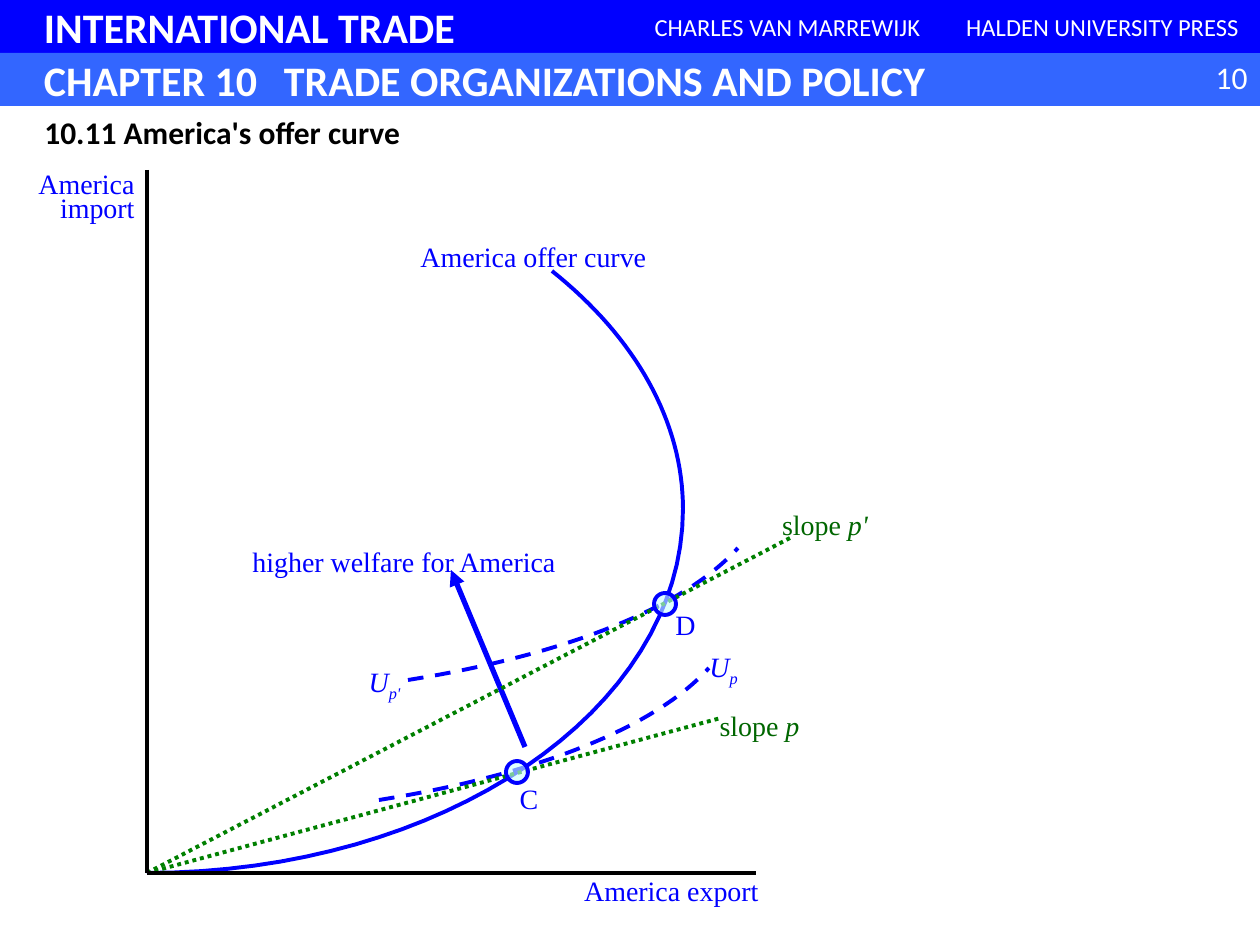
from dataclasses import dataclass

from lxml.etree import SubElement
from pptx import Presentation
from pptx.dml.color import RGBColor
from pptx.enum.dml import MSO_LINE_DASH_STYLE as DASH
from pptx.enum.shapes import MSO_CONNECTOR, MSO_SHAPE
from pptx.enum.text import MSO_ANCHOR as ANCHOR, PP_ALIGN as ALIGN
from pptx.oxml.ns import qn
from pptx.util import Emu, Pt


@dataclass(frozen=True)
class Theme:
    blue: str = "0000FF"
    band: str = "3366FF"
    green: str = "008000"
    dark_green: str = "006600"
    black: str = "000000"
    white: str = "FFFFFF"
    marker: str = "CCFFFF"
    sans: str = "Calibri"
    serif: str = "Times New Roman"
    heading: int = 24
    title: int = 18
    label: int = 16
    credit: int = 14
    line: float = 2.25
    arrow: float = 3


T = Theme()
INSET = 44
ITALIC = {"italic": True}
SUBSCRIPT = {"italic": True, "baseline": -25000}


def px(v):
    return Emu(round(v * 914400 / 126))


def write(sp, runs, color, size, font=T.sans, align=ALIGN.LEFT, wrap=True,
          anchor=ANCHOR.TOP, **para):
    """Fill a shape with one paragraph; runs is a string or (text, format) pairs."""
    tf = sp.text_frame
    tf.word_wrap, tf.vertical_anchor = wrap, anchor
    p = tf.paragraphs[0]
    for name, value in {"alignment": align, **para}.items():
        setattr(p, name, value)
    for text, fmt in [(runs, {})] if isinstance(runs, str) else runs:
        r = p.add_run()
        r.text = text
        r.font.color.rgb = RGBColor.from_string(color)
        for name, value in {"name": font, "size": Pt(size), **fmt}.items():
            if name == "baseline":
                r._r.get_or_add_rPr().set(name, str(value))
            else:
                setattr(r.font, name, value)
    return sp


def text_box(s, box, runs, color, size, **fmt):
    return write(s.shapes.add_textbox(*map(px, box)), runs, color, size, **fmt)


def stroke(sp, color, width=T.line, dash=None):
    sp.line.color.rgb = RGBColor.from_string(color)
    sp.line.width = Pt(width)
    if dash:
        sp.line.dash_style = dash


def filled(s, kind, box, color):
    sp = s.shapes.add_shape(kind, *map(px, box))
    sp.shadow.inherit = False
    sp.fill.solid()
    sp.fill.fore_color.rgb = RGBColor.from_string(color)
    sp.line.fill.background()
    return sp


def straight(s, start, end, color, width=T.line, dash=None, arrow=False):
    ln = s.shapes.add_connector(MSO_CONNECTOR.STRAIGHT, *map(px, start + end))
    stroke(ln, color, width, dash)
    if arrow:
        SubElement(ln.line._get_or_add_ln(), qn("a:tailEnd"), type="triangle")
    SubElement(ln._element.spPr, qn("a:effectLst"))


def bezier(a, b, c, d, steps=32):
    for i in range(steps + 1):
        t = i / steps
        u = 1 - t
        yield tuple(u**3 * k + 3 * u * u * t * m + 3 * u * t * t * n + t**3 * q
                    for k, m, n, q in zip(a, b, c, d))


def curve(s, knots, dash=None):
    """Draw chained cubic curves; every third knot lies on the line."""
    pts = [(px(x), px(y)) for i in range(0, len(knots) - 1, 3)
           for x, y in bezier(*knots[i:i + 4])]
    fb = s.shapes.build_freeform(*pts[0])
    fb.add_line_segments(pts[1:], close=False)
    sp = fb.convert_to_shape()
    sp.shadow.inherit = False
    sp.fill.background()
    stroke(sp, T.blue, dash=dash)


def header(s, x, y, w, h):
    """Two stacked bands: book with credits, then chapter with page number."""
    row = h // 2
    bands = [("INTERNATIONAL TRADE", T.blue),
             ("CHAPTER 10\tTRADE ORGANIZATIONS AND POLICY", T.band)]
    for i, (text, color) in enumerate(bands):
        sp = filled(s, MSO_SHAPE.RECTANGLE, (x, y + i * row, w, row), color)
        sp.text_frame.margin_left = px(INSET)
        write(sp, [(text, {"bold": True})], T.white, T.heading, anchor=ANCHOR.MIDDLE)
    tabs = SubElement(sp.text_frame.paragraphs[0]._p.get_or_add_pPr(), qn("a:tabLst"))
    SubElement(tabs, qn("a:tab"), pos=str(px(240)), algn="l")

    quarter = w // 4
    for i, text in enumerate(["CHARLES VAN MARREWIJK", "HALDEN UNIVERSITY PRESS"]):
        sp = filled(s, MSO_SHAPE.RECTANGLE,
                    (x + (2 + i) * quarter, y, quarter, row), T.blue)
        write(sp, text, T.white, T.credit, align=ALIGN.CENTER, anchor=ANCHOR.MIDDLE)
    text_box(s, (x + w - 84, y + row - 1, 84, 50), "10", T.white, T.title,
             align=ALIGN.RIGHT)


def offer_diagram(s, x, y, w, h):
    """Offer curve diagram; the box is the area spanned by the two axes."""
    def at(dx, dy):
        return x + dx, y + dy

    def label(dx, dy, width, runs, color=T.blue):
        text_box(s, (*at(dx, dy), width, 47), runs, color, T.label,
                 font=T.serif, align=ALIGN.CENTER, wrap=False)

    origin = at(0, h)
    indifference = [(232, 630), (390, 605), (509, 557), (562, 498)]
    for dx, dy in [(0, 0), (29, -120)]:
        curve(s, [at(a + dx, b + dy) for a, b in indifference], DASH.DASH)
    straight(s, at(378, 577), at(304, 400), T.blue, T.arrow, arrow=True)
    label(90, 368, 334, "higher welfare for America")

    offer = [(0, h), (295, h), (536, 541), (536, 339), (536, 252), (489, 168), (405, 101)]
    curve(s, [at(*knot) for knot in offer])
    label(259, 63, 255, "America offer curve")

    for end in [(574, 548), (643, 368)]:
        straight(s, origin, at(*end), T.green, dash=DASH.ROUND_DOT)
    straight(s, at(0, 0), origin, T.black)
    straight(s, origin, at(w, h), T.black)
    text_box(s, (*at(-126, 0), 126, 60), "America import", T.blue, T.label,
             font=T.serif, align=ALIGN.RIGHT, line_spacing=0.7)
    label(423, 697, 203, "America export")

    radius = 11
    for cx, cy in [(370, 602), (518, 434)]:
        sp = filled(s, MSO_SHAPE.OVAL,
                    (*at(cx - radius, cy - radius), 2 * radius, 2 * radius), T.marker)
        stroke(sp, T.blue)
        rgb = sp._element.spPr.find(qn("a:solidFill"))[0]
        SubElement(rgb, qn("a:alpha"), val="60000")

    label(360, 605, 44, "C")
    label(516, 431, 45, "D")
    label(559, 532, 107, [("slope ", {}), ("p", ITALIC)], T.dark_green)
    label(622, 331, 112, [("slope ", {}), ("p'", ITALIC)], T.dark_green)
    label(549, 473, 55, [("U", ITALIC), ("p", SUBSCRIPT)])
    label(208, 488, 59, [("U", ITALIC), ("p'", SUBSCRIPT)])


def main():
    prs = Presentation()
    prs.slide_width, prs.slide_height = px(1260), px(945)
    s = prs.slides.add_slide(prs.slide_layouts[6])
    header(s, 0, 0, 1260, 106)
    offer_diagram(s, 147, 170, 609, 703)
    text_box(s, (32, 107, 892, 50), [("10.11 America's offer curve", {"bold": True})],
             T.black, T.title)
    prs.save("out.pptx")


if __name__ == "__main__":
    main()
